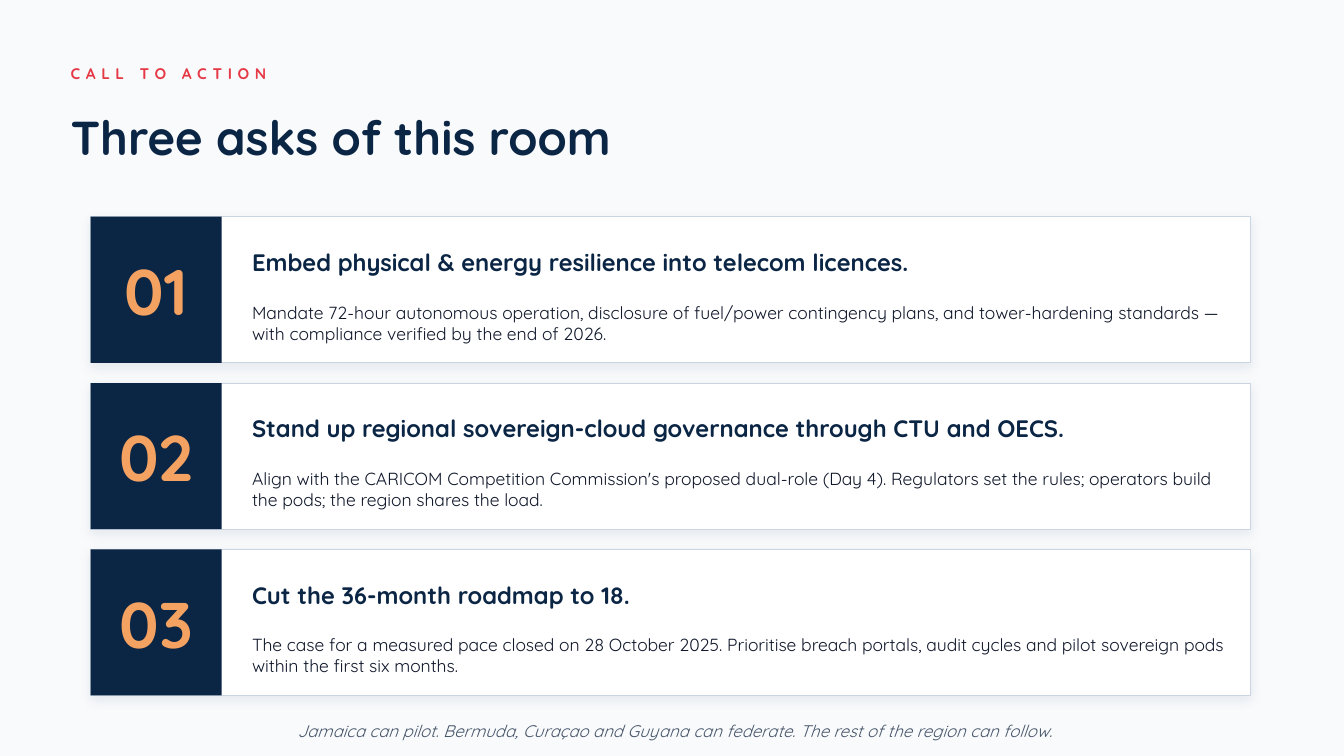
from dataclasses import dataclass

from lxml import etree
from pptx import Presentation
from pptx import util as u
from pptx.dml.color import RGBColor
from pptx.enum import shapes, text
from pptx.oxml.ns import qn


@dataclass(frozen=True)
class Theme:
    font: str = "Quicksand"
    background: str = "F8FAFC"
    card: str = "FFFFFF"
    border: str = "CBD5E1"
    navy: str = "0B2545"
    red: str = "E63946"
    orange: str = "F4A261"
    ink: str = "0F172A"
    muted: str = "475569"
    kicker_size: float = 11
    title_size: float = 34
    number_size: float = 46
    heading_size: float = 17
    body_size: float = 12.5
    closing_size: float = 12


ASKS = [
    ("Embed physical & energy resilience into telecom licences.",
     "Mandate 72-hour autonomous operation, disclosure of fuel/power contingency plans, "
     "and tower-hardening standards — with compliance verified by the end of 2026."),
    ("Stand up regional sovereign-cloud governance through CTU and OECS.",
     "Align with the CARICOM Competition Commission's proposed dual-role (Day 4). "
     "Regulators set the rules; operators build the pods; the region shares the load."),
    ("Cut the 36-month roadmap to 18.",
     "The case for a measured pace closed on 28 October 2025. Prioritise breach portals, "
     "audit cycles and pilot sovereign pods within the first six months."),
]
CARD_LEFT, CARD_TOP, CARD_WIDTH, CARD_HEIGHT = 0.9, 2.15, 11.5, 1.45
CARD_STEP = 1.65
TILE_WIDTH = 1.3
TEXT_LEFT, TEXT_WIDTH = 2.5, 9.7


class SlideBuilder:
    """Draws styled elements on one page; places are left, top, width, height in inches."""

    def __init__(self, page, theme):
        self.page = page
        self.theme = theme
        fill = page.background.fill
        fill.solid()
        fill.fore_color.rgb = RGBColor.from_string(theme.background)

    def add_text(self, words, place, *, size, color, bold=False, italic=False,
                 align=text.PP_ALIGN.LEFT, spacing=None):
        """Add a one-paragraph text box; spacing is the letter spacing in points."""
        box = self.page.shapes.add_textbox(*map(u.Inches, place))
        frame = box.text_frame
        frame.word_wrap = True
        frame.vertical_anchor = text.MSO_ANCHOR.MIDDLE
        frame.margin_left = frame.margin_top = frame.margin_right = frame.margin_bottom = 0
        para = frame.paragraphs[0]
        para.alignment = align
        span = para.add_run()
        span.text = words
        span.font.name = self.theme.font
        span.font.size = u.Pt(size)
        span.font.bold = bold
        span.font.italic = italic
        span.font.color.rgb = RGBColor.from_string(color)
        if spacing:
            span.font._element.set("spc", str(spacing * 100))

    def add_rectangle(self, place, fill, border=None):
        box = self.page.shapes.add_shape(shapes.MSO_SHAPE.RECTANGLE, *map(u.Inches, place))
        box.shadow.inherit = False
        box.fill.solid()
        box.fill.fore_color.rgb = RGBColor.from_string(fill)
        if border:
            box.line.color.rgb = RGBColor.from_string(border)
            box.line.width = u.Pt(0.75)
        else:
            box.line.fill.background()
        return box

    def add_soft_shadow(self, box):
        effects = box._element.spPr.find(qn("a:effectLst"))
        shadow = etree.SubElement(
            effects, qn("a:outerShdw"), blurRad=str(u.Pt(8)), dist=str(u.Pt(2)),
            dir="5400000", algn="ctr", rotWithShape="0")
        color = etree.SubElement(shadow, qn("a:srgbClr"), val=self.theme.navy)
        etree.SubElement(color, qn("a:alpha"), val="8000")

    def add_ask(self, number, top, heading, body):
        """Add a card with a numbered tile, a heading and a body."""
        theme = self.theme
        card = self.add_rectangle((CARD_LEFT, top, CARD_WIDTH, CARD_HEIGHT),
                                  theme.card, theme.border)
        self.add_soft_shadow(card)
        tile = (CARD_LEFT, top, TILE_WIDTH, CARD_HEIGHT)
        self.add_rectangle(tile, theme.navy)
        self.add_text(f"{number:02}", tile, size=theme.number_size, color=theme.orange,
                      bold=True, align=text.PP_ALIGN.CENTER)
        self.add_text(heading, (TEXT_LEFT, top + 0.2, TEXT_WIDTH, 0.5),
                      size=theme.heading_size, color=theme.navy, bold=True)
        self.add_text(body, (TEXT_LEFT, top + 0.7, TEXT_WIDTH, 0.7),
                      size=theme.body_size, color=theme.ink)


def main():
    deck = Presentation()
    deck.slide_width, deck.slide_height = u.Inches(13.33), u.Inches(7.5)
    theme = Theme()
    builder = SlideBuilder(deck.slides.add_slide(deck.slide_layouts[6]), theme)

    builder.add_text("CALL TO ACTION", (0.7, 0.55, 12, 0.35), size=theme.kicker_size,
                     color=theme.red, bold=True, spacing=4)
    builder.add_text("Three asks of this room", (0.7, 0.95, 12, 0.8),
                     size=theme.title_size, color=theme.navy, bold=True)
    for index, (heading, body) in enumerate(ASKS):
        builder.add_ask(index + 1, CARD_TOP + index * CARD_STEP, heading, body)
    builder.add_text(
        "Jamaica can pilot. Bermuda, Curaçao and Guyana can federate. "
        "The rest of the region can follow.",
        (0.7, 7.05, 12, 0.4), size=theme.closing_size, color=theme.muted,
        italic=True, align=text.PP_ALIGN.CENTER)

    deck.save("out.pptx")


if __name__ == "__main__":
    main()
